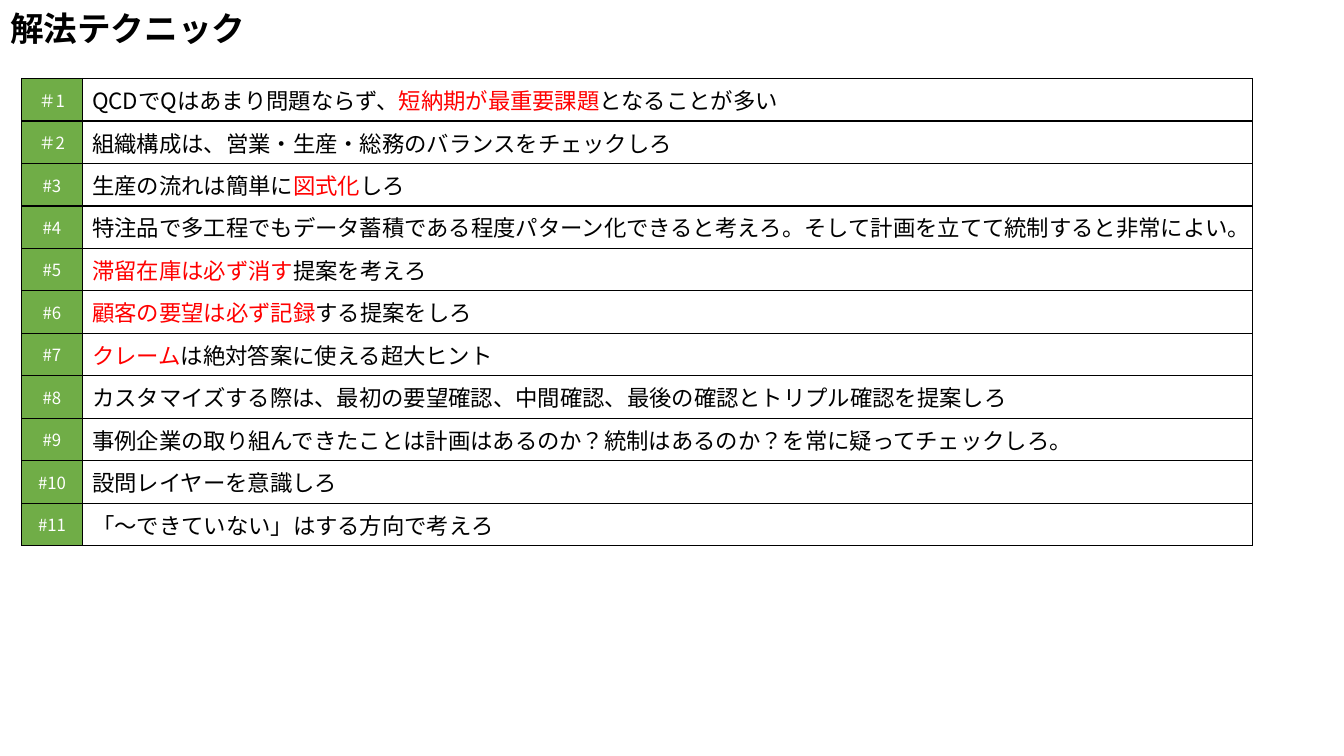
from lxml.etree import SubElement
from pptx import Presentation
from pptx.dml.color import RGBColor
from pptx.enum.lang import MSO_LANGUAGE_ID
from pptx.enum.text import MSO_ANCHOR, MSO_AUTO_SIZE, PP_ALIGN
from pptx.oxml.ns import qn
from pptx.util import Cm, Pt

FACE = "Noto Sans CJK JP"
COLORS = {"ink": "000000", "mark": "FF0000", "label": "FFFFFF", "green": "70AD47"}
TITLE = {"size": Pt(24), "bold": True}
LABEL = {"size": Pt(12), "bold": False}
BODY = {"size": Pt(16), "bold": False}
TIPS = [
    ("＃1", "QCDでQはあまり問題ならず、*短納期が最重要課題*となることが多い"),
    ("＃2", "組織構成は、営業・生産・総務のバランスをチェックしろ"),
    ("#3", "生産の流れは簡単に*図式化*しろ"),
    ("#4", "特注品で多工程でもデータ蓄積である程度パターン化できると考えろ。"
           "そして計画を立てて統制すると非常によい。"),
    ("#5", "*滞留在庫は必ず消す*提案を考えろ"),
    ("#6", "*顧客の要望は必ず記録*する提案をしろ"),
    ("#7", "*クレーム*は絶対答案に使える超大ヒント"),
    ("#8", "カスタマイズする際は、最初の要望確認、中間確認、"
           "最後の確認とトリプル確認を提案しろ"),
    ("#9", "事例企業の取り組んできたことは計画はあるのか？"
           "統制はあるのか？を常に疑ってチェックしろ。"),
    ("#10", "設問レイヤーを意識しろ"),
    ("#11", "「～できていない」はする方向で考えろ"),
]


def apply(item, values):
    for name, value in values.items():
        setattr(item, name, value)


def tint(name):
    return RGBColor.from_string(COLORS[name])


def add_run(para, text, style, color):
    run = para.add_run()
    run.text = text
    apply(run.font, {"name": FACE, "language_id": MSO_LANGUAGE_ID.JAPANESE, **style})
    run.font.color.rgb = tint(color)
    SubElement(run.font._element, qn("a:ea"), typeface=FACE)


def add_title(slide, text):
    title = slide.shapes.title
    apply(title, {"left": 0, "top": 0, "width": Cm(33.87), "height": Cm(1.52)})
    frame = title.text_frame
    apply(frame, {"vertical_anchor": MSO_ANCHOR.MIDDLE, "auto_size": MSO_AUTO_SIZE.NONE})
    para = frame.paragraphs[0]
    apply(para, {"alignment": PP_ALIGN.LEFT, "line_spacing": 0.9})
    add_run(para, text, TITLE, "ink")


def add_edges(cell):
    props = cell._tc.get_or_add_tcPr()
    for side in "LRTB":
        line = SubElement(props, qn(f"a:ln{side}"), w=str(Pt(1)))
        fill = SubElement(line, qn("a:solidFill"))
        SubElement(fill, qn("a:srgbClr"), val=COLORS["ink"])


def fill_label(cell, text):
    cell.fill.solid()
    cell.fill.fore_color.rgb = tint("green")
    para = cell.text_frame.paragraphs[0]
    para.alignment = PP_ALIGN.CENTER
    add_run(para, text, LABEL, "label")


def fill_tip(cell, text):
    cell.fill.background()
    para = cell.text_frame.paragraphs[0]
    for pos, part in enumerate(text.split("*")):
        if part:
            add_run(para, part, BODY, "mark" if pos % 2 else "ink")


def add_tips(slide, tips):
    wide, high = (Cm(1.52), Cm(29.49)), Cm(1.07)
    frame = slide.shapes.add_table(
        len(tips), 2, Cm(0.55), Cm(1.98), sum(wide), high * len(tips))
    table = frame.table
    apply(table, {"first_row": False, "horz_banding": False})
    for col, width in zip(table.columns, wide):
        col.width = width
    for row, (label, tip) in zip(table.rows, tips):
        row.height = high
        for cell in row.cells:
            cell.vertical_anchor = MSO_ANCHOR.MIDDLE
            add_edges(cell)
        fill_label(row.cells[0], label)
        fill_tip(row.cells[1], tip)


def main():
    deck = Presentation()
    apply(deck, {"slide_width": Cm(33.87), "slide_height": Cm(19.05)})
    slide = deck.slides.add_slide(deck.slide_layouts[5])
    add_title(slide, "解法テクニック")
    add_tips(slide, TIPS)
    deck.save("out.pptx")


if __name__ == "__main__":
    main()
